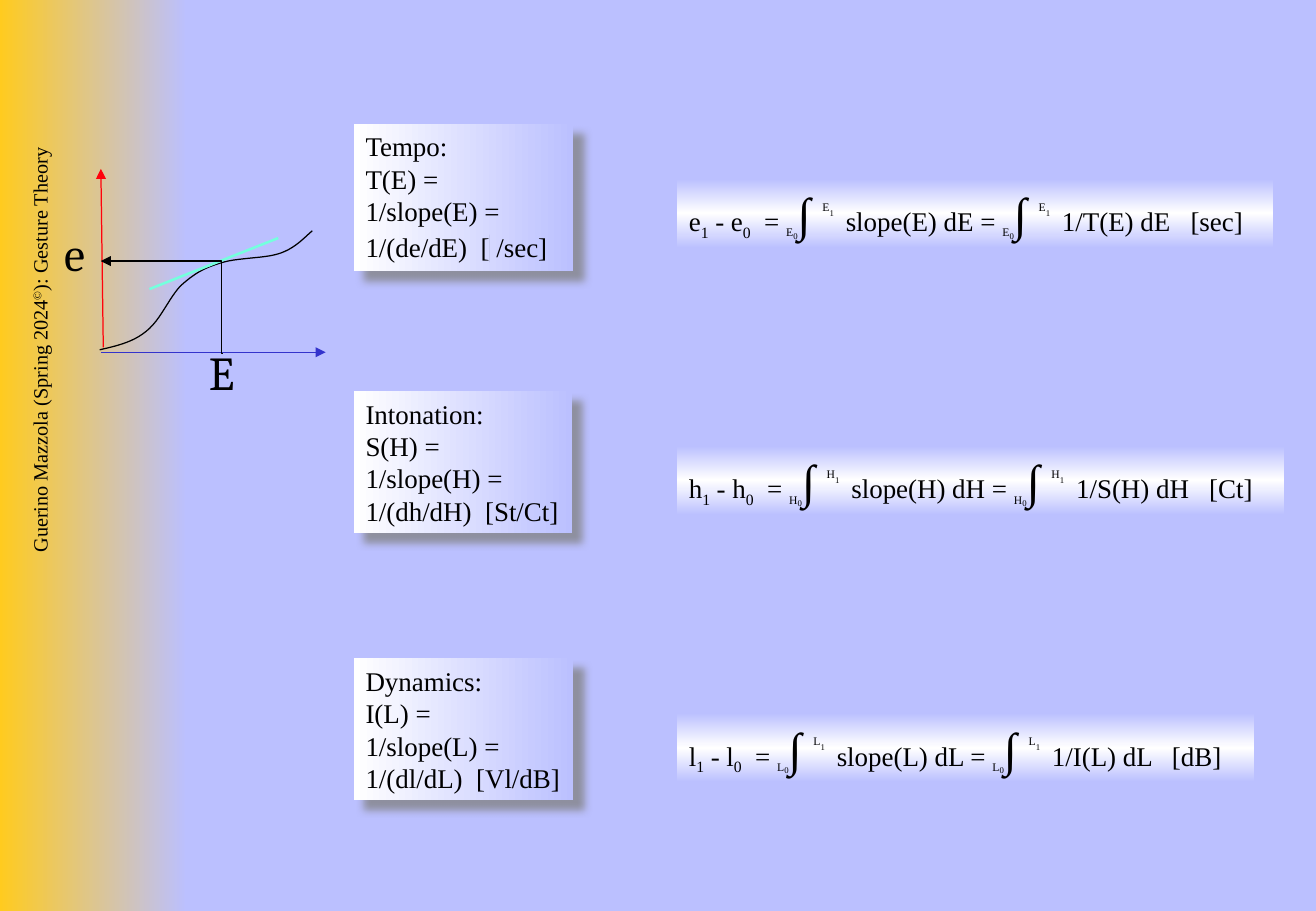
from lxml.etree import SubElement
from pptx import Presentation
from pptx.dml.color import RGBColor
from pptx.enum.shapes import MSO_CONNECTOR as CONN, MSO_SHAPE as SHAPE
from pptx.enum.text import MSO_AUTO_SIZE as AUTO, PP_ALIGN as ALIGN
from pptx.oxml.ns import qn
from pptx.util import Inches, Pt

COLORS = {"lilac": "BBC0FF", "gold": "FFCB1F", "white": "FFFFFF", "black": "000000",
          "shadow": "808080", "x_axis": "3333CC", "y_axis": "FF020B", "tangent": "75FFDD"}
SERIF = "Times New Roman"

# A run is (text, size, baseline in percent, font)
CREDIT = [("Guerino Mazzola (Spring 2024", 12, 0, SERIF), ("©", 12, 30, SERIF),
          ("): Gesture Theory", 12, 0, SERIF)]

# (definition runs, box width, box height, time symbol, variable, curve, unit, formula width)
RULES = [
    ([("Tempo: \nT(E) =\n1/slope(E) =\n1/(de/dE)  [", 16, 0, SERIF), ("♩", 18, 0, "Lato"),
      (" /sec]", 16, 0, SERIF)], 1.81, 1.21, "e", "E", "T", "sec", 4.91),
    ([("Intonation: \nS(H) =\n1/slope(H) =\n1/(dh/dH)  [St/Ct]", 16, 0, SERIF)],
     1.8, 1.17, "h", "H", "S", "Ct", 5),
    ([("Dynamics:\nI(L) =\n1/slope(L) =\n1/(dl/dL)  [Vl/dB]", 16, 0, SERIF)],
     1.81, 1.17, "l", "L", "I", "dB", 4.75),
]
RULES_TOP, RULES_STEP = 1.02, 2.2
BOX_LEFT, FORMULA_LEFT, FORMULA_DROP, FORMULA_HEIGHT = 2.91, 5.57, 0.45, 0.57

# Start point, then cubic segments (control, control, end)
CURVE_START = (0.82, 2.88)
CURVE = [((0.95, 2.85), (1.09, 2.82), (1.2, 2.73)),
         ((1.32, 2.64), (1.39, 2.45), (1.49, 2.35)),
         ((1.59, 2.26), (1.67, 2.21), (1.8, 2.17)),
         ((1.94, 2.12), (2.16, 2.13), (2.29, 2.09)),
         ((2.42, 2.05), (2.49, 1.97), (2.57, 1.9))]
CURVE_STEPS = 12

# (kind, start, end, colour, width, has arrowhead)
LINES = [(CONN.STRAIGHT, (0.83, 2.9), (2.68, 2.9), "x_axis", 0.75, True),
         (CONN.STRAIGHT, (0.85, 2.86), (0.83, 1.39), "y_axis", 0.75, True),
         (CONN.STRAIGHT, (1.23, 2.38), (2.29, 1.96), "tangent", 1.5, False),
         (CONN.ELBOW, (1.83, 2.91), (0.83, 2.15), "black", 0.75, True)]
AXIS_LABELS = [("E", 1.62, 2.78, 0.43, 0.57), ("e", 0.43, 1.8, 0.39, 0.57)]


def rgb(name):
    return RGBColor.from_string(COLORS[name])


def integral(variable, integrand):
    return [(variable, 12, -25, SERIF), ("0", 9, -50, SERIF), ("∫ ", 28, 0, SERIF),
            (variable, 12, 100, SERIF), ("1", 9, 100, SERIF), (" ", 28, 0, SERIF),
            (integrand, 16, 0, SERIF)]


def formula(symbol, variable, curve, unit):
    difference = [(symbol, 16, 0, SERIF), ("1", 16, -25, SERIF), (f" - {symbol}", 16, 0, SERIF),
                  ("0", 16, -25, SERIF), ("  = ", 16, 0, SERIF)]
    return (difference + integral(variable, f"slope({variable}) d{variable} = ")
            + integral(variable, f"1/{curve}({variable}) d{variable}   [{unit}]"))


def add_text(slide, runs, x, y, w, h):
    """Add a text box that grows with its text; a newline in a run is a line break."""
    s = slide.shapes.add_textbox(Inches(x), Inches(y), Inches(w), Inches(h))
    tf = s.text_frame
    tf.word_wrap = False
    tf.auto_size = AUTO.SHAPE_TO_FIT_TEXT
    p = tf.paragraphs[0]
    for text, size, baseline, font in runs:
        for i, line in enumerate(text.split("\n")):
            if i:
                p.add_line_break()
            r = p.add_run()
            r.text = line
            r.font.size, r.font.name = Pt(size), font
            r.font.color.rgb = rgb("black")
            if baseline:
                r._r.get_or_add_rPr().set("baseline", str(baseline * 1000))
    return s


def set_gradient(s, names, angle):
    """Fill a shape with evenly spaced colour stops."""
    s.fill.gradient()
    s.fill.gradient_angle = angle
    stops = s._element.spPr.find(qn("a:gradFill")).find(qn("a:gsLst"))
    for stop in list(stops):
        stops.remove(stop)
    for i, name in enumerate(names):
        stop = SubElement(stops, qn("a:gs"), pos=str(100000 * i // (len(names) - 1)))
        SubElement(stop, qn("a:srgbClr"), val=COLORS[name])


def add_shadow(s):
    s.shadow.inherit = False
    effects = s._element.spPr.find(qn("a:effectLst"))
    outer = SubElement(effects, qn("a:outerShdw"), blurRad=str(Pt(5)), dist=str(Pt(8.5)),
                       dir="2700000", algn="tl", rotWithShape="0")
    color = SubElement(outer, qn("a:srgbClr"), val=COLORS["shadow"])
    SubElement(color, qn("a:alpha"), val="75000")


def add_line(slide, kind, start, end, color, width, arrow):
    s = slide.shapes.add_connector(kind, *map(Inches, start + end))
    s.line.color.rgb, s.line.width = rgb(color), Pt(width)
    spPr = s._element.spPr
    if arrow:
        SubElement(s.line._get_or_add_ln(), qn("a:tailEnd"), type="triangle")
    if kind == CONN.ELBOW:
        guides = spPr.find(qn("a:prstGeom")).find(qn("a:avLst"))
        SubElement(guides, qn("a:gd"), name="adj1", fmla="val 600")
    SubElement(spPr, qn("a:effectLst"))


def curve_points():
    start = CURVE_START
    for c1, c2, end in CURVE:
        for i in range(1, CURVE_STEPS + 1):
            t = i / CURVE_STEPS
            u = 1 - t
            yield tuple(Inches(u**3 * a + 3 * u * u * t * b + 3 * u * t * t * c + t**3 * d)
                        for a, b, c, d in zip(start, c1, c2, end))
        start = end


def add_curve(slide):
    builder = slide.shapes.build_freeform(*map(Inches, CURVE_START))
    builder.add_line_segments(list(curve_points()), close=False)
    s = builder.convert_to_shape()
    s.shadow.inherit = False
    s.fill.background()
    s.line.color.rgb, s.line.width = rgb("black"), Pt(0.75)


def main():
    prs = Presentation()
    prs.slide_width, prs.slide_height = Inches(10.83), Inches(7.5)
    slide = prs.slides.add_slide(prs.slide_layouts[6])
    slide.background.fill.solid()
    slide.background.fill.fore_color.rgb = rgb("lilac")

    band = slide.shapes.add_shape(SHAPE.RECTANGLE, 0, 0, Inches(1.54), prs.slide_height)
    band.shadow.inherit = False
    band.line.fill.background()
    set_gradient(band, ["gold", "lilac"], 0)

    credit = add_text(slide, CREDIT, -2.4, 3.66, 5.65, 0.5)
    credit.rotation = 270
    credit.text_frame.word_wrap = True
    credit.text_frame.auto_size = AUTO.NONE
    credit.text_frame.margin_right = Inches(0.13)
    credit.text_frame.paragraphs[0].alignment = ALIGN.RIGHT

    for i, (definition, w, h, symbol, variable, curve, unit, formula_w) in enumerate(RULES):
        y = RULES_TOP + i * RULES_STEP
        box = add_text(slide, definition, BOX_LEFT, y, w, h)
        set_gradient(box, ["white", "lilac"], 0)
        add_shadow(box)
        strip = add_text(slide, formula(symbol, variable, curve, unit),
                         FORMULA_LEFT, y + FORMULA_DROP, formula_w, FORMULA_HEIGHT)
        set_gradient(strip, ["lilac", "white", "lilac"], 90)

    add_curve(slide)
    for label, *place in AXIS_LABELS:
        add_text(slide, [(label, 28, 0, "Cambria")], *place)
    for line in LINES:
        add_line(slide, *line)
    prs.save("out.pptx")


if __name__ == "__main__":
    main()
